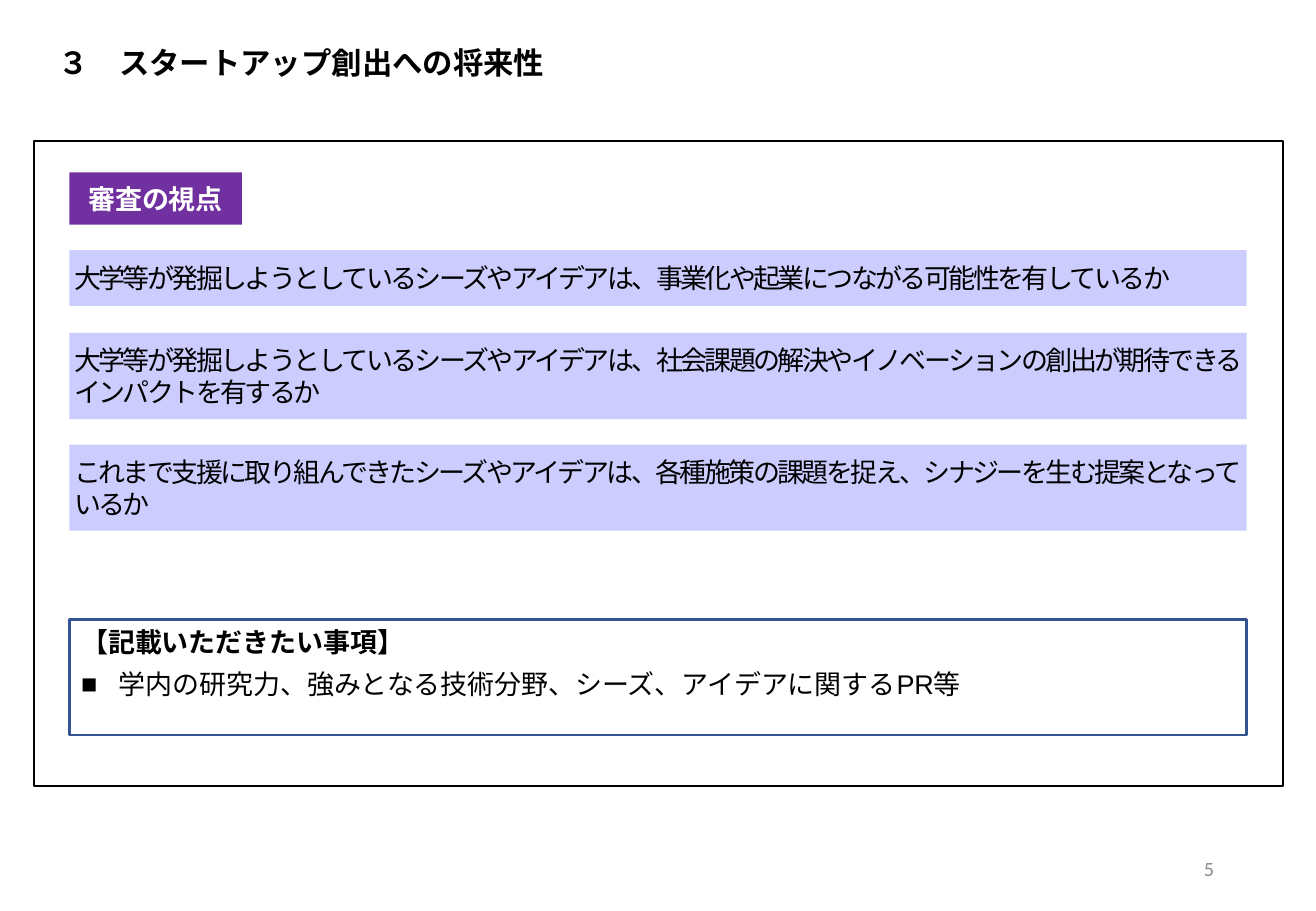
from lxml import etree
from pptx import Presentation
from pptx.dml.color import RGBColor
from pptx.enum.shapes import MSO_SHAPE
from pptx.enum.text import MSO_ANCHOR, PP_ALIGN
from pptx.oxml.ns import qn
from pptx.util import Emu, Pt

RECT = MSO_SHAPE.RECTANGLE
TOP, MIDDLE = MSO_ANCHOR.TOP, MSO_ANCHOR.MIDDLE
LEFT, CENTER, RIGHT = PP_ALIGN.LEFT, PP_ALIGN.CENTER, PP_ALIGN.RIGHT
PX = 9144
CJK = "Noto Sans CJK JP"
COLORS = {"text": "000000", "paper": "FFFFFF", "label": "7030A0",
          "criterion": "CCCCFF", "border": "325491", "number": "8C8C8C"}
CONTENT_X, CONTENT_W = 57, 969
CRITERIA = [
    (206, 46, "大学等が発掘しようとしているシーズやアイデアは、事業化や起業につながる可能性を有しているか"),
    (274, 71, "大学等が発掘しようとしているシーズやアイデアは、社会課題の解決やイノベーションの創出が期待できるインパクトを有するか"),
    (366, 71, "これまで支援に取り組んできたシーズやアイデアは、各種施策の課題を捉え、シナジーを生む提案となっているか"),
]


class SlideBuilder:
    """Draws styled boxes and text on one slide, measured in px."""

    def __init__(self, prs):
        self.s = prs.slides.add_slide(prs.slide_layouts[6])

    def color(self, name):
        return RGBColor.from_string(COLORS[name])

    def box(self, x, y, w, h, fill, line=None, line_width=1):
        sp = self.s.shapes.add_shape(RECT, *(Emu(v * PX) for v in (x, y, w, h)))
        sp.shadow.inherit = False
        sp.fill.solid()
        sp.fill.fore_color.rgb = self.color(fill)
        if line:
            sp.line.color.rgb = self.color(line)
            sp.line.width = Pt(line_width)
        else:
            sp.line.fill.background()
        return sp

    def textbox(self, x, y, w, h):
        return self.s.shapes.add_textbox(*(Emu(v * PX) for v in (x, y, w, h)))

    def frame(self, sp, inset_x=4, inset_y=4, anchor=MIDDLE):
        tf = sp.text_frame
        values = {"word_wrap": True, "vertical_anchor": anchor,
                  "margin_left": Emu(inset_x * PX), "margin_right": Emu(inset_x * PX),
                  "margin_top": Emu(inset_y * PX), "margin_bottom": Emu(inset_y * PX)}
        for name, value in values.items():
            setattr(tf, name, value)
        return tf

    def add_text(self, p, text, size=16, font="Arial", color="text", bold=False,
                 align=LEFT, spacing=0):
        p.alignment = align
        r = p.add_run()
        r.text = text
        for name, value in {"size": Pt(size), "name": font, "bold": bold}.items():
            setattr(r.font, name, value)
        r.font.color.rgb = self.color(color)
        rpr = r._r.get_or_add_rPr()
        rpr.set("lang", "ja-JP")
        if spacing:
            rpr.set("spc", str(spacing))
        ea = etree.Element(qn("a:ea"), typeface=CJK)
        rpr.find(qn("a:latin")).addnext(ea)

    def bullet(self, p, char, indent, tab):
        ppr = p._p.get_or_add_pPr()
        ppr.set("marL", str(indent * PX))
        ppr.set("indent", str(-indent * PX))
        etree.SubElement(ppr, qn("a:buFont"), typeface="Arial")
        etree.SubElement(ppr, qn("a:buChar"), char=char)
        tabs = etree.SubElement(ppr, qn("a:tabLst"))
        etree.SubElement(tabs, qn("a:tab"), pos=str(tab * PX), algn="l")


def main():
    prs = Presentation()
    prs.slide_width, prs.slide_height = Emu(1083 * PX), Emu(750 * PX)
    b = SlideBuilder(prs)

    title = b.frame(b.textbox(44, 32, 603, 38))
    b.add_text(title.paragraphs[0], "３　スタートアップ創出への将来性", 18, "Calibri", bold=True)

    b.box(28, 116, 1028, 531, "paper", "text")
    label = b.frame(b.box(CONTENT_X, 142, 142, 43, "label"))
    b.add_text(label.paragraphs[0], "審査の視点", color="paper", bold=True, align=CENTER)

    for y, h, text in CRITERIA:
        tf = b.frame(b.box(CONTENT_X, y, CONTENT_W, h, "criterion"))
        b.add_text(tf.paragraphs[0], text, font=CJK, spacing=-150)

    request = b.frame(b.box(CONTENT_X, 510, CONTENT_W, 95, "paper", "border", 1.5),
                      10, 5, TOP)
    b.add_text(request.paragraphs[0], "【記載いただきたい事項】", bold=True)
    p = request.add_paragraph()
    b.bullet(p, "■", 31, 69)
    p.space_before = Pt(6)
    b.add_text(p, "学内の研究力、強みとなる技術分野、シーズ、アイデアに関するPR等")

    number = b.frame(b.textbox(765, 695, 244, 40), 10, 5)
    b.add_text(number.paragraphs[0], "5", 12, "Calibri", "number", align=RIGHT)

    prs.save("out.pptx")


if __name__ == "__main__":
    main()
